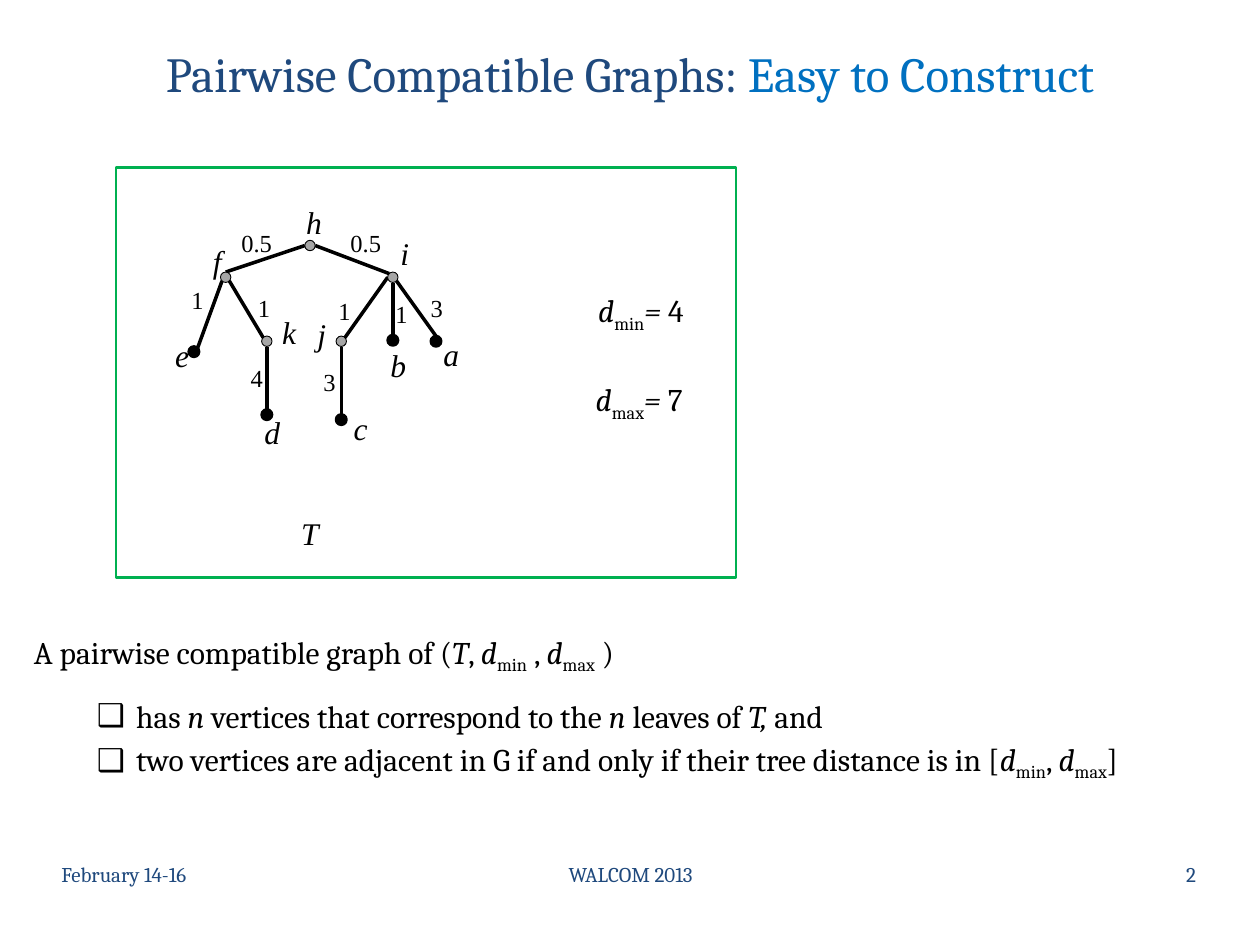
from dataclasses import dataclass
from typing import NamedTuple

from lxml import etree
from pptx import Presentation
from pptx import util as u
from pptx.dml.color import RGBColor
from pptx.enum import shapes, text
from pptx.oxml.ns import qn


@dataclass(frozen=True)
class Theme:
    navy: RGBColor = RGBColor(0x1F, 0x49, 0x7D)
    blue: RGBColor = RGBColor(0x00, 0x70, 0xC0)
    green: RGBColor = RGBColor(0x00, 0xB0, 0x50)
    grey: RGBColor = RGBColor(0xA6, 0xA6, 0xA6)
    black: RGBColor = RGBColor(0, 0, 0)
    serif: str = "Cambria"
    math: str = "Times New Roman"
    title: int = 28
    body: int = 18
    weight: int = 14
    footer: int = 12


class Box(NamedTuple):
    left: float
    top: float
    width: float
    height: float

    def lengths(self) -> list:
        return [u.Cm(value) for value in self]


class Run(NamedTuple):
    text: str
    italic: bool = False
    subscript: bool = False


class Vertex(NamedTuple):
    x: float
    y: float
    label_left: float
    label_top: float
    leaf: bool = False


class Edge(NamedTuple):
    start: str
    start_side: str
    end: str
    end_side: str
    weight: str
    label_left: float
    label_top: float
    label_width: float = 1.45


class Bullet(NamedTuple):
    space_before: float
    runs: list


THEME = Theme()
DIAMETER = 0.21
LETTER_WIDTH, LABEL_HEIGHT = 0.64, 0.75
SIDES = {"top": (0, -1), "bottom": (0, 1), "left": (-1, 0), "right": (1, 0),
         "top left": (-0.7, -0.7), "top right": (0.7, -0.7),
         "bottom left": (-0.7, 0.7), "bottom right": (0.7, 0.7)}

VERTICES = {
    "h": Vertex(6.25, 4.95, 5.92, 4.09),
    "f": Vertex(4.55, 5.59, 4.04, 4.88),
    "i": Vertex(7.92, 5.59, 7.82, 4.72),
    "k": Vertex(5.38, 6.88, 5.44, 6.32),
    "j": Vertex(6.88, 6.88, 6.15, 6.35),
    "e": Vertex(3.91, 7.09, 3.28, 6.78, True),
    "d": Vertex(5.38, 8.36, 5.08, 8.33, True),
    "c": Vertex(6.88, 8.46, 6.88, 8.26, True),
    "b": Vertex(7.92, 6.86, 7.62, 6.99, True),
    "a": Vertex(8.79, 6.88, 8.69, 6.76, True),
}
EDGES = [
    Edge("h", "left", "f", "top", "0.5", 4.45, 4.52),
    Edge("h", "right", "i", "top left", "0.5", 6.65, 4.52),
    Edge("f", "bottom left", "e", "top right", "1", 3.61, 5.66, LETTER_WIDTH),
    Edge("f", "bottom right", "k", "top left", "1", 4.6, 5.82),
    Edge("k", "bottom", "d", "top", "4", 4.45, 7.24),
    Edge("i", "left", "j", "top right", "1", 6.22, 5.89),
    Edge("j", "bottom", "c", "top", "3", 5.92, 7.32),
    Edge("i", "bottom", "b", "top", "1", 7.37, 5.94),
    Edge("i", "bottom right", "a", "top", "3", 8.08, 5.82),
]


def distance(bound: str) -> list[Run]:
    return [Run("d", italic=True), Run(bound, subscript=True)]


HEADING = [Run("A pairwise compatible graph of ("), Run("T", True), Run(", "),
           *distance("min"), Run(" , "), *distance("max"), Run(" )")]
BULLETS = [
    Bullet(12.7, [Run("has "), Run("n ", True), Run("vertices that correspond to the"),
                  Run(" n ", True), Run("leaves of "), Run("T, ", True), Run("and")]),
    Bullet(6.4, [Run("two vertices are adjacent in G if and only if their tree distance is in ["),
                 *distance("min"), Run(", "), *distance("max"), Run("]")]),
]


def write(paragraph, runs: list[Run], size: int, color=THEME.black,
          name: str = THEME.serif, align=text.PP_ALIGN.LEFT) -> None:
    paragraph.alignment = align
    paragraph.font.name, paragraph.font.size = name, u.Pt(size)
    paragraph.font.color.rgb = color
    for part in runs:
        run = paragraph.add_run()
        run.text = part.text
        if part.italic:
            run.font.italic = True
        if part.subscript:
            run.font._element.set("baseline", "-25000")


def add_text(slide, box: Box, runs: list[Run], size: int, wrap: bool = True,
             anchor=text.MSO_ANCHOR.MIDDLE, **style) -> None:
    frame = slide.shapes.add_textbox(*box.lengths()).text_frame
    frame.word_wrap, frame.vertical_anchor = wrap, anchor
    write(frame.paragraphs[0], runs, size, **style)


def add_label(slide, box: Box, label: str, size: int, italic: bool = False) -> None:
    add_text(slide, box, [Run(label, italic)], size, name=THEME.math,
             align=text.PP_ALIGN.CENTER)


def add_outline(slide, kind, box: Box, line, width: float, fill=None) -> None:
    shape = slide.shapes.add_shape(kind, *box.lengths())
    shape.shadow.inherit = False
    shape.line.color.rgb, shape.line.width = line, u.Pt(width)
    if fill is None:
        shape.fill.background()
    else:
        shape.fill.solid()
        shape.fill.fore_color.rgb = fill


def add_vertex(slide, name: str, vertex: Vertex) -> None:
    box = Box(vertex.x - DIAMETER / 2, vertex.y - DIAMETER / 2, DIAMETER, DIAMETER)
    add_outline(slide, shapes.MSO_SHAPE.OVAL, box, THEME.black,
                1.5 if vertex.leaf else 0.5, THEME.black if vertex.leaf else THEME.grey)
    label = Box(vertex.label_left, vertex.label_top, LETTER_WIDTH, LABEL_HEIGHT)
    add_label(slide, label, name, THEME.body, italic=True)


def rim_point(name: str, side: str) -> list:
    vertex, (dx, dy) = VERTICES[name], SIDES[side]
    return [u.Cm(vertex.x + dx * DIAMETER / 2), u.Cm(vertex.y + dy * DIAMETER / 2)]


def add_edge(slide, edge: Edge) -> None:
    connector = slide.shapes.add_connector(
        shapes.MSO_CONNECTOR.STRAIGHT, *rim_point(edge.start, edge.start_side),
        *rim_point(edge.end, edge.end_side))
    connector.line.color.rgb, connector.line.width = THEME.black, u.Pt(2)
    etree.SubElement(connector._element.spPr, qn("a:effectLst"))
    label = Box(edge.label_left, edge.label_top, edge.label_width, LABEL_HEIGHT)
    add_label(slide, label, edge.weight, THEME.weight)


def place(shape, box: Box) -> None:
    shape.left, shape.top, shape.width, shape.height = box.lengths()


def set_bullet(paragraph, margin: float, indent: float, character: str = "") -> None:
    properties = paragraph._p.get_or_add_pPr()
    properties.set("marL", str(u.Cm(margin)))
    properties.set("indent", str(u.Cm(indent)))
    bullet = etree.Element(qn("a:buChar" if character else "a:buNone"))
    if character:
        bullet.set("char", character)
    properties.find(qn("a:defRPr")).addprevious(bullet)


def add_title(slide) -> None:
    title = slide.shapes.title
    place(title, Box(0, 0, 25.4, 2.92))
    title.text_frame.vertical_anchor = text.MSO_ANCHOR.MIDDLE
    paragraph = title.text_frame.paragraphs[0]
    write(paragraph, [Run("Pairwise Compatible Graphs: "), Run("Easy to Construct")],
          THEME.title, THEME.navy, align=text.PP_ALIGN.CENTER)
    paragraph.runs[1].font.color.rgb = THEME.blue


def add_body(slide) -> None:
    body = slide.placeholders[1]
    place(body, Box(0.43, 12.75, 24.77, 4.19))
    frame = body.text_frame
    frame.auto_size, frame.vertical_anchor = text.MSO_AUTO_SIZE.NONE, text.MSO_ANCHOR.TOP
    heading = frame.paragraphs[0]
    write(heading, HEADING, THEME.body)
    set_bullet(heading, 0, 0)
    heading.space_before = u.Pt(0)
    for bullet in BULLETS:
        paragraph = frame.add_paragraph()
        paragraph.level = 1
        write(paragraph, bullet.runs, THEME.body)
        set_bullet(paragraph, 2.06, -0.79, "❑")
        paragraph.space_before = u.Pt(bullet.space_before)
    for paragraph in frame.paragraphs:
        paragraph.line_spacing = u.Pt(21)


def main() -> None:
    presentation = Presentation()
    presentation.slide_width, presentation.slide_height = u.Cm(25.4), u.Cm(19.05)
    slide = presentation.slides.add_slide(presentation.slide_layouts[1])
    add_title(slide)
    add_body(slide)

    # Footer
    for left, width, words, align in [
            (0.99, 5.92, "February 14-16", text.PP_ALIGN.LEFT),
            (8.69, 8.05, "WALCOM 2013", text.PP_ALIGN.CENTER),
            (18.44, 5.92, "2", text.PP_ALIGN.RIGHT)]:
        add_text(slide, Box(left, 17.12, width, 1.02), [Run(words)], THEME.footer,
                 color=THEME.navy, align=align)

    # Framed tree with its distance bounds
    add_outline(slide, shapes.MSO_SHAPE.RECTANGLE, Box(2.34, 3.38, 12.5, 8.26),
                THEME.green, 1.5)
    for edge in EDGES:
        add_edge(slide, edge)
    for name, vertex in VERTICES.items():
        add_vertex(slide, name, vertex)
    add_label(slide, Box(5.82, 10.36, LETTER_WIDTH, LABEL_HEIGHT), "T", THEME.body, italic=True)
    for left, top, bound, value in [(11.81, 5.74, "min", "4"), (11.76, 7.54, "max", "7")]:
        add_text(slide, Box(left, top, 2.46, 1.02),
                 [*distance(bound), Run("= ", True), Run(value)], THEME.body,
                 wrap=False, anchor=text.MSO_ANCHOR.TOP)

    presentation.save("out.pptx")


if __name__ == "__main__":
    main()
